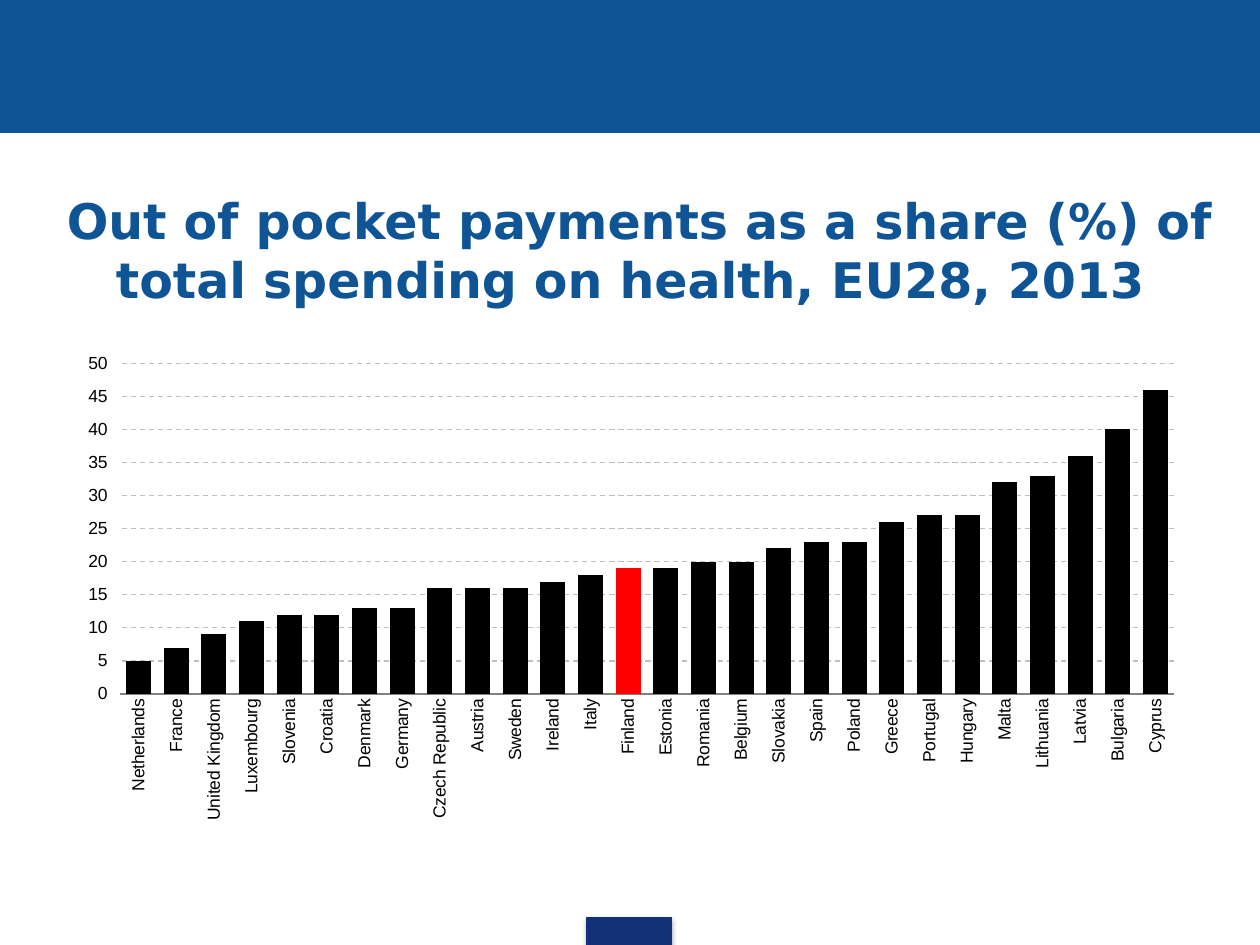
from lxml import etree
from pptx import Presentation
from pptx.chart.data import CategoryChartData
from pptx.dml.color import RGBColor
from pptx.enum.chart import XL_CHART_TYPE as ChartType, XL_TICK_MARK as TickMark
from pptx.enum.dml import MSO_LINE_DASH_STYLE as DashStyle
from pptx.enum.shapes import MSO_SHAPE as ShapeType
from pptx.enum.text import MSO_ANCHOR as Anchor, MSO_AUTO_SIZE as AutoSize, PP_ALIGN as Align
from pptx.oxml import parse_xml
from pptx.oxml.ns import qn
from pptx.util import Inches, Pt

BLUE = "0F5494"
NAVY = "133176"
BLACK = "000000"
RED = "FF0000"
GREY = "BFBFBF"
HIGHLIGHT = "Finland"

PAYMENT_SHARES = {
    "Netherlands": 5, "France": 7, "United Kingdom": 9, "Luxembourg": 11,
    "Slovenia": 12, "Croatia": 12, "Denmark": 13, "Germany": 13,
    "Czech Republic": 16, "Austria": 16, "Sweden": 16, "Ireland": 17,
    "Italy": 18, "Finland": 19, "Estonia": 19, "Romania": 20,
    "Belgium": 20, "Slovakia": 22, "Spain": 23, "Poland": 23,
    "Greece": 26, "Portugal": 27, "Hungary": 27, "Malta": 32,
    "Lithuania": 33, "Latvia": 36, "Bulgaria": 40, "Cyprus": 46,
}

SHADOW_XML = (
    '<a:effectLst xmlns:a="http://schemas.openxmlformats.org/drawingml/2006/main">'
    '<a:outerShdw blurRad="39370" dist="22860" dir="5400000" rotWithShape="0">'
    '<a:srgbClr val="000000"><a:alpha val="35000"/></a:srgbClr>'
    '</a:outerShdw></a:effectLst>'
)


def color(value):
    return RGBColor.from_string(value)


def paint(format_, value):
    format_.fill.solid()
    format_.fill.fore_color.rgb = color(value)


def add_band(page, left, top, width, height, fill):
    band = page.shapes.add_shape(
        ShapeType.RECTANGLE, Inches(left), Inches(top), Inches(width), Inches(height))
    band.shadow.inherit = False
    paint(band, fill)
    band.line.color.rgb = color(fill)
    band.line.width = Pt(0.75)
    return band


def add_shadow(shape):
    properties = shape.element.spPr
    properties.remove(properties.find(qn("a:effectLst")))
    properties.append(parse_xml(SHADOW_XML))


def set_title(page, text):
    title = page.shapes.title
    title.left, title.top = Inches(0.43), Inches(1.47)
    title.width, title.height = Inches(9.57), Inches(1.02)
    frame = title.text_frame
    frame.text = text
    frame.word_wrap = True
    frame.auto_size = AutoSize.NONE
    frame.vertical_anchor = Anchor.MIDDLE
    para = frame.paragraphs[0]
    para.alignment = Align.LEFT
    indent = Inches(0.39)
    properties = para._p.get_or_add_pPr()
    properties.set("marL", str(indent))
    properties.set("indent", str(-indent))
    font = para.runs[0].font
    font.name, font.size, font.bold = "DejaVu Sans", Pt(28), True
    font.color.rgb = color(BLUE)


def set_plot_area(chart, **position):
    plot_area = chart.element.chart.plotArea
    layout = plot_area.find(qn("c:layout"))
    if layout is None:
        layout = etree.Element(qn("c:layout"))
        plot_area.insert(0, layout)
    manual = etree.SubElement(layout, qn("c:manualLayout"))
    settings = {"layoutTarget": "inner", "xMode": "edge", "yMode": "edge", **position}
    for name, value in settings.items():
        etree.SubElement(manual, qn(f"c:{name}")).set("val", str(value))


def style_axes(chart):
    countries = chart.category_axis
    countries.major_tick_mark = TickMark.NONE
    countries.format.line.color.rgb = color("808080")
    countries.format.line.width = Pt(0.75)
    countries.tick_labels.font.size = Pt(10)
    countries._element.txPr.bodyPr.set("rot", "-5400000")
    countries._element.txPr.bodyPr.set("vert", "horz")

    shares = chart.value_axis
    shares.minimum_scale, shares.maximum_scale, shares.major_unit = 0, 50, 5
    shares.major_tick_mark = TickMark.OUTSIDE
    shares.format.line.fill.background()
    shares.tick_labels.number_format = "#,##0"
    shares.tick_labels.number_format_is_linked = False
    gridline = shares.major_gridlines.format.line
    gridline.color.rgb = color(GREY)
    gridline.width = Pt(0.75)
    gridline.dash_style = DashStyle.DASH


def add_share_chart(page):
    data = CategoryChartData()
    data.categories = list(PAYMENT_SHARES)
    data.add_series("Series 1", list(PAYMENT_SHARES.values()))
    chart = page.shapes.add_chart(
        ChartType.COLUMN_CLUSTERED, Inches(0.5), Inches(2.73), Inches(9), Inches(3.86), data).chart
    chart.has_legend = False
    chart.has_title = False
    chart.font.name, chart.font.size = "Arial", Pt(10)
    chart.font.color.rgb = color(BLACK)
    plot = chart.plots[0]
    plot.gap_width = 51
    plot.vary_by_categories = False
    series = plot.series[0]
    paint(series.format, BLACK)
    paint(series.points[list(PAYMENT_SHARES).index(HIGHLIGHT)].format, RED)
    style_axes(chart)
    set_plot_area(chart, x=0.05, y=0.04, w=0.93, h=0.68)


def main():
    deck = Presentation()
    deck.slide_width, deck.slide_height = Inches(10), Inches(7.5)
    page = deck.slides.add_slide(deck.slide_layouts[5])
    add_band(page, 0, 0, 10, 1.05, BLUE)
    add_shadow(add_band(page, 4.66, 7.28, 0.67, 0.22, NAVY))
    set_title(page, "Out of pocket payments as a share (%) of total spending on health, EU28, 2013")
    add_share_chart(page)
    deck.save("out.pptx")


if __name__ == "__main__":
    main()
